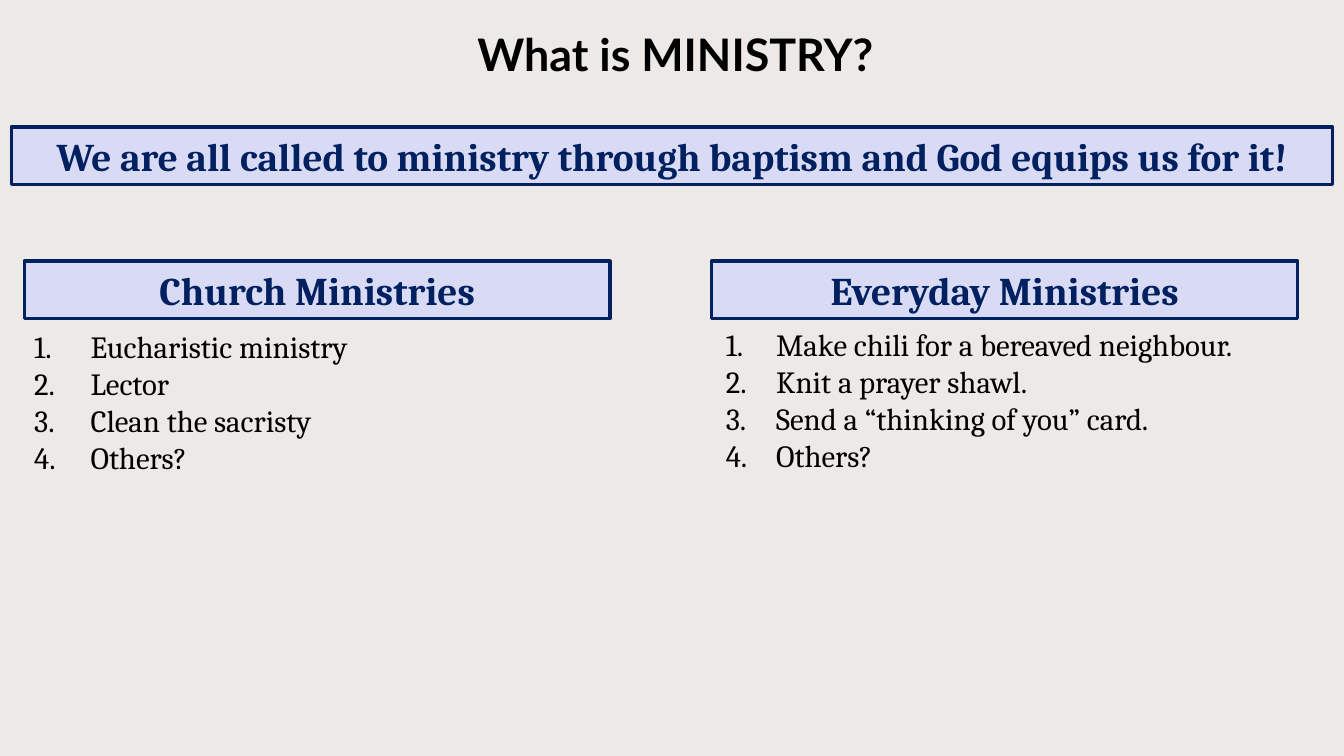
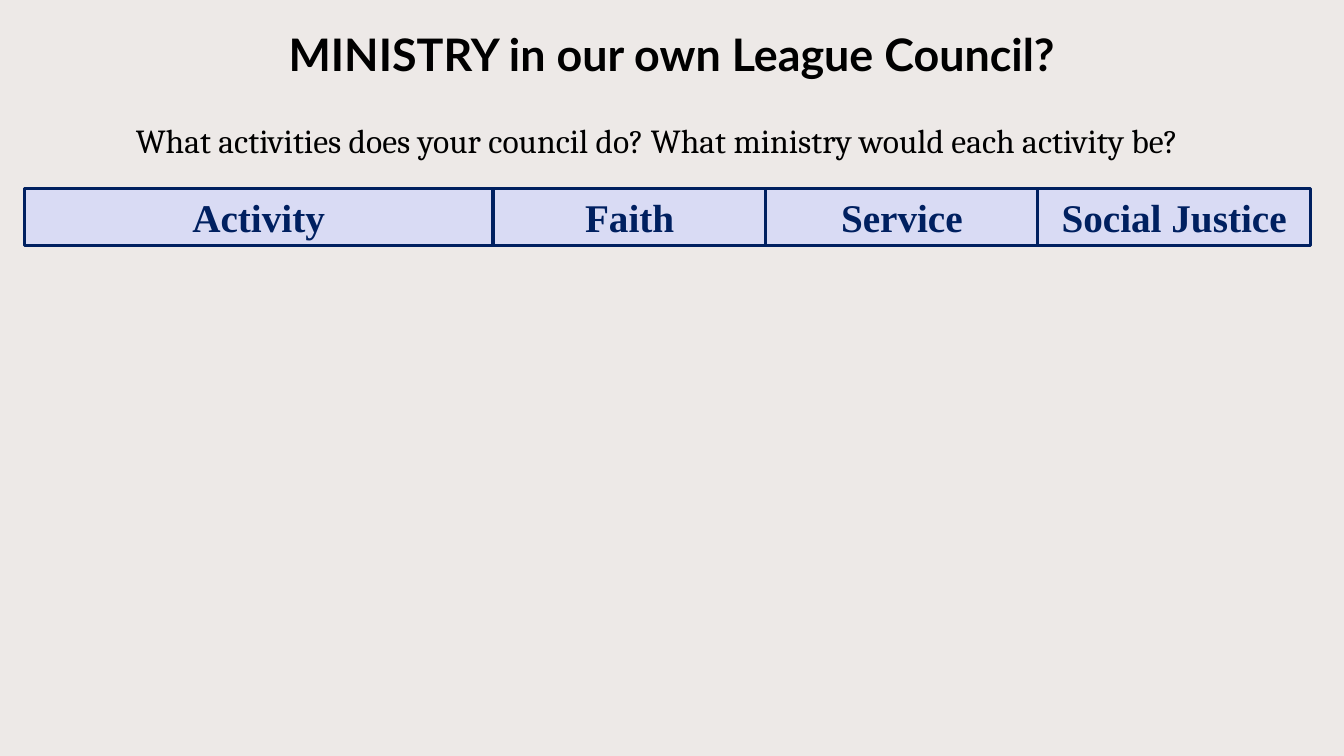
from dataclasses import dataclass

from lxml.etree import SubElement
from pptx import Presentation
from pptx.dml.color import RGBColor
from pptx.enum.shapes import MSO_SHAPE
from pptx.enum.text import MSO_ANCHOR, MSO_AUTO_SIZE, PP_ALIGN
from pptx.oxml.ns import qn
from pptx.util import Inches, Pt


@dataclass(frozen=True)
class Theme:
    background: RGBColor = RGBColor(0xED, 0xE9, 0xE7)
    text: RGBColor = RGBColor(0x00, 0x00, 0x00)
    navy: RGBColor = RGBColor(0x00, 0x20, 0x60)
    lavender: RGBColor = RGBColor(0xD9, 0xDB, 0xF4)
    title_font: str = "Lato"
    body_font: str = "Cambria"
    column_font: str = "Times New Roman"
    title_size: int = 32
    banner_size: int = 28
    prompt_size: int = 24
    list_size: int = 22
    border: float = 2.25
    banner_height: float = 0.57


class Deck:
    def __init__(self, theme):
        self.theme = theme
        self.prs = Presentation()
        self.prs.slide_width = Inches(13.33)
        self.prs.slide_height = Inches(7.5)
        fill = self.prs.slide_master.background.fill
        fill.solid()
        fill.fore_color.rgb = theme.background
        self.s = None

    def add_run(self, p, text, font, size, color, bold=False):
        r = p.add_run()
        r.text = text
        r.font.name = font
        r.font.size = Pt(size)
        r.font.color.rgb = color
        r.font.bold = bold

    def new_slide(self, title, left=0, width=13.33):
        """Start a slide and set its title."""
        t = self.theme
        self.s = self.prs.slides.add_slide(self.prs.slide_layouts[5])
        sp = self.s.shapes.title
        sp.left, sp.top = Inches(left), Inches(0)
        sp.width, sp.height = Inches(width), Inches(0.86)
        tf = sp.text_frame
        tf.auto_size = MSO_AUTO_SIZE.NONE
        tf.vertical_anchor = MSO_ANCHOR.BOTTOM
        p = tf.paragraphs[0]
        p.alignment = PP_ALIGN.CENTER
        p.line_spacing = 0.9
        self.add_run(p, title, t.title_font, t.title_size, t.text, bold=True)

    def banner(self, text, left, top, width, font=None):
        """Draw a bordered box with a bold centred heading."""
        t = self.theme
        sp = self.s.shapes.add_shape(
            MSO_SHAPE.RECTANGLE, Inches(left), Inches(top),
            Inches(width), Inches(t.banner_height))
        sp.shadow.inherit = False
        sp.fill.solid()
        sp.fill.fore_color.rgb = t.lavender
        sp.line.color.rgb = t.navy
        sp.line.width = Pt(t.border)
        tf = sp.text_frame
        tf.word_wrap = True
        tf.auto_size = MSO_AUTO_SIZE.SHAPE_TO_FIT_TEXT
        tf.vertical_anchor = MSO_ANCHOR.TOP
        p = tf.paragraphs[0]
        p.alignment = PP_ALIGN.CENTER
        self.add_run(p, text, font or t.body_font, t.banner_size, t.navy, bold=True)

    def text_box(self, left, top, width, height):
        """Add a wrapping text box and return its text frame."""
        sp = self.s.shapes.add_textbox(
            Inches(left), Inches(top), Inches(width), Inches(height))
        tf = sp.text_frame
        tf.word_wrap = True
        tf.auto_size = MSO_AUTO_SIZE.SHAPE_TO_FIT_TEXT
        return tf

    def prompt(self, text, left, top, width):
        t = self.theme
        p = self.text_box(left, top, width, 0.5).paragraphs[0]
        p.alignment = PP_ALIGN.CENTER
        self.add_run(p, text, t.body_font, t.prompt_size, t.text)

    def numbered_list(self, items, left, top, width, indent):
        t = self.theme
        tf = self.text_box(left, top, width, 1.58)
        for i, item in enumerate(items):
            p = tf.add_paragraph() if i else tf.paragraphs[0]
            pPr = p._p.get_or_add_pPr()
            pPr.set("marL", str(Inches(indent)))
            pPr.set("indent", str(-Inches(indent)))
            SubElement(pPr, qn("a:buAutoNum"), type="arabicPeriod")
            self.add_run(p, item, t.body_font, t.list_size, t.text)


def ministry_slide(deck):
    deck.new_slide("What is MINISTRY?", left=2.23, width=8.94)
    deck.banner("We are all called to ministry through baptism and God equips us for it!",
                0.11, 1.26, 13.11)
    for heading, left in (("Church Ministries", 0.24), ("Everyday Ministries", 7.06)):
        deck.banner(heading, left, 2.59, 5.81)
    deck.numbered_list(
        ["Eucharistic ministry", "Lector", "Clean the sacristy", "Others?"],
        0.24, 3.2, 5.62, indent=0.56)
    deck.numbered_list(
        ["Make chili for a bereaved neighbour.", "Knit a prayer shawl.",
         "Send a “thinking of you” card.", "Others?"],
        7.1, 3.18, 6.15, indent=0.5)


def council_slide(deck):
    deck.new_slide("MINISTRY in our own League Council?")
    deck.prompt("What activities does your council do? What ministry would each activity be?",
                0.13, 1.14, 12.77)
    top, font = 1.87, deck.theme.column_font
    deck.banner("Activity", 0.24, top, 4.65, font)
    for i, ministry in enumerate(("Faith", "Service", "Social Justice")):
        deck.banner(ministry, 4.89 + 2.7 * i, top, 2.71, font)


def main():
    deck = Deck(Theme())
    ministry_slide(deck)
    council_slide(deck)
    deck.prs.save("out.pptx")


if __name__ == "__main__":
    main()
